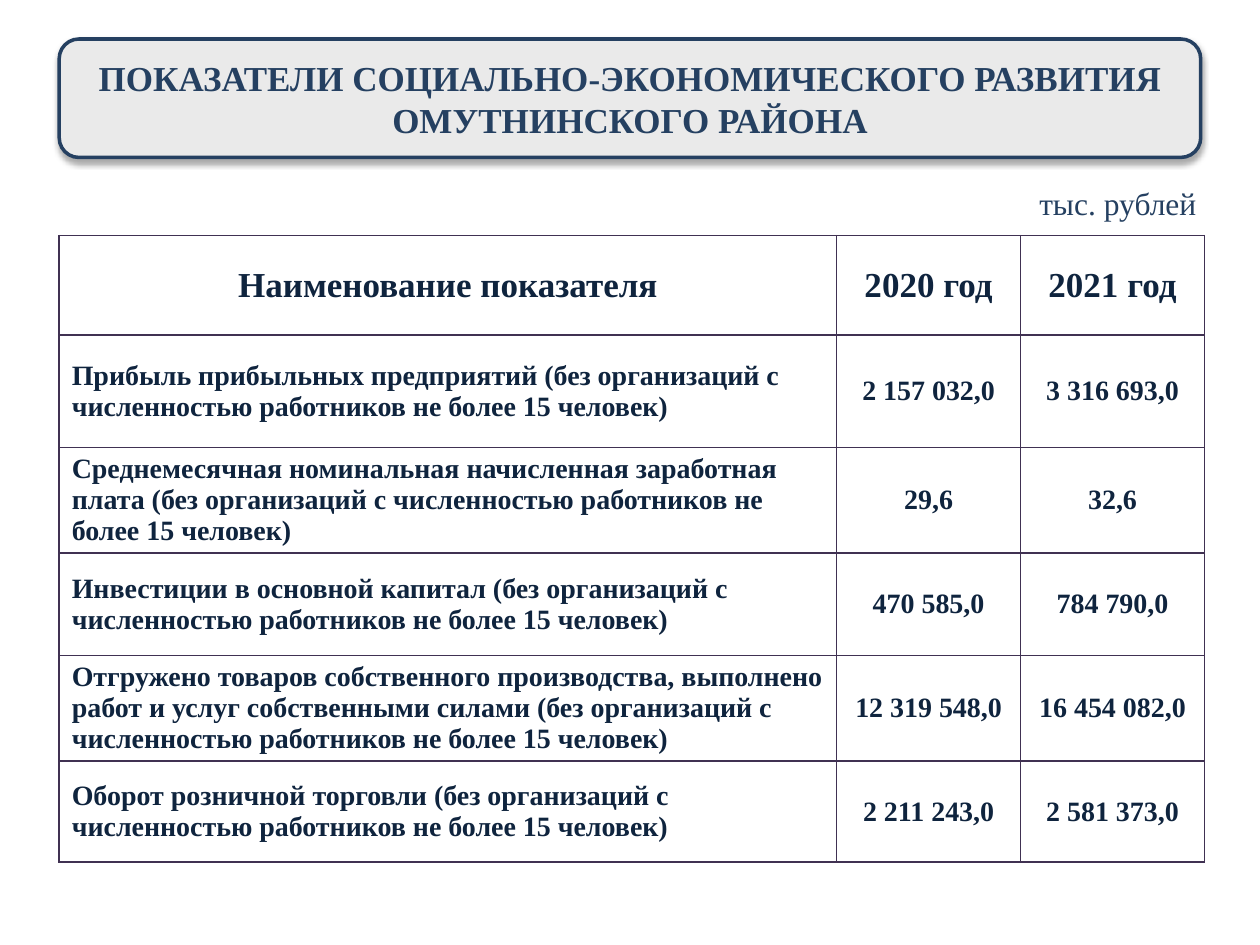
from lxml import etree
from pptx import Presentation
from pptx import util as u
from pptx.dml.color import RGBColor
from pptx.enum import shapes, text
from pptx.oxml import parse_xml
from pptx.oxml.ns import nsdecls, qn

COLUMNS, ROWS = 100, 75
LEFT, CONTENT_WIDTH = 4.7, 90.6
HEADER = ("Наименование показателя", "2020 год", "2021 год")
NOTE = "(без организаций с численностью работников не более 15 человек)"
INDICATORS = (
    ("Прибыль прибыльных предприятий", "2 157 032,0", "3 316 693,0"),
    ("Среднемесячная номинальная начисленная заработная плата", "29,6", "32,6"),
    ("Инвестиции в основной капитал", "470 585,0", "784 790,0"),
    ("Отгружено товаров собственного производства, выполнено работ и услуг "
     "собственными силами", "12 319 548,0", "16 454 082,0"),
    ("Оборот розничной торговли", "2 211 243,0", "2 581 373,0"),
)


def color(value):
    return RGBColor.from_string(value)


class SlideBuilder:
    """Places elements on a grid of COLUMNS by ROWS cells."""

    font = "Times New Roman"
    accent, ink, border, panel_fill, paper = "254061", "0F243E", "403152", "EAEAEA", "FFFFFF"

    def __init__(self, presentation):
        self.slide = presentation.slides.add_slide(presentation.slide_layouts[5])
        self.column = presentation.slide_width / COLUMNS
        self.row = presentation.slide_height / ROWS

    def box(self, left, top, width, height):
        return (round(left * self.column), round(top * self.row),
                round(width * self.column), round(height * self.row))

    def add_words(self, frame, words, size, ink, bold=False, align=text.PP_ALIGN.LEFT):
        paragraph = frame.paragraphs[0]
        paragraph.alignment = align
        run = paragraph.add_run()
        run.text = words
        run.font.name, run.font.size, run.font.bold = self.font, u.Pt(size), bold
        run.font.color.rgb = color(ink)

    def table(self, left, top, widths, heights, records):
        frame = self.slide.shapes.add_table(
            len(heights), len(widths), *self.box(left, top, sum(widths), sum(heights)))
        table = frame.table
        table.first_row = table.horz_banding = False
        for column, width in zip(table.columns, widths):
            column.width = round(width * self.column)
        for row, height in zip(table.rows, heights):
            row.height = round(height * self.row)
        for i, record in enumerate(records):
            for j, words in enumerate(record):
                cell = table.cell(i, j)
                cell.vertical_anchor = text.MSO_ANCHOR.MIDDLE
                self.outline(cell)
                cell.fill.solid()
                cell.fill.fore_color.rgb = color(self.paper)
                align = text.PP_ALIGN.LEFT if i and j == 0 else text.PP_ALIGN.CENTER
                self.add_words(cell.text_frame, words, 16 if i else 20, self.ink, True, align)

    def outline(self, cell):
        properties = cell._tc.get_or_add_tcPr()
        for side in ("a:lnL", "a:lnR", "a:lnT", "a:lnB"):
            line = etree.SubElement(properties, qn(side), w=str(u.Pt(1)))
            fill = etree.SubElement(line, qn("a:solidFill"))
            etree.SubElement(fill, qn("a:srgbClr"), val=self.border)

    def panel(self, *place):
        shape = self.slide.shapes.add_shape(
            shapes.MSO_SHAPE.ROUNDED_RECTANGLE, *self.box(*place))
        shape.fill.solid()
        shape.fill.fore_color.rgb = color(self.panel_fill)
        shape.line.color.rgb = color(self.accent)
        shape.line.width = u.Pt(2)
        shape._element.spPr.append(parse_xml(
            f'<a:effectLst {nsdecls("a")}><a:outerShdw blurRad="{u.Pt(3.5)}" '
            f'dist="{u.Pt(2.2)}" dir="5400000" rotWithShape="0"><a:srgbClr val="000000">'
            '<a:alpha val="32000"/></a:srgbClr></a:outerShdw></a:effectLst>'))

    def label(self, words, size, *place):
        frame = self.slide.shapes.add_textbox(*self.box(*place)).text_frame
        frame.word_wrap = True
        frame.auto_size = text.MSO_AUTO_SIZE.SHAPE_TO_FIT_TEXT
        self.add_words(frame, words, size, self.accent)

    def title(self, words, size, *place):
        """Formats the title placeholder and brings it to the front."""
        title = self.slide.shapes.title
        title.left, title.top, title.width, title.height = self.box(*place)
        frame = title.text_frame
        frame.word_wrap = True
        frame.auto_size = text.MSO_AUTO_SIZE.NONE
        frame.vertical_anchor = text.MSO_ANCHOR.MIDDLE
        self.add_words(frame, words, size, self.accent, True, text.PP_ALIGN.CENTER)
        self.slide.shapes._spTree.append(title._element)


def main():
    presentation = Presentation()
    presentation.slide_width, presentation.slide_height = u.Inches(10), u.Inches(7.5)
    builder = SlideBuilder(presentation)
    records = [HEADER] + [(f"{name} {NOTE}", *values) for name, *values in INDICATORS]
    builder.table(LEFT, 18.7, (61.7, 14.6, 14.6), (7.9, 8.9, 7, 8.1, 7.1, 8), records)
    builder.panel(LEFT, 3.1, CONTENT_WIDTH, 9.4)
    builder.label("тыс. рублей", 18, 81.5, 14.1, 17.7, 4)
    builder.title("ПОКАЗАТЕЛИ СОЦИАЛЬНО-ЭКОНОМИЧЕСКОГО РАЗВИТИЯ ОМУТНИНСКОГО РАЙОНА",
                  20, LEFT, 3.9, CONTENT_WIDTH, 7.8)
    presentation.save("out.pptx")


if __name__ == "__main__":
    main()
